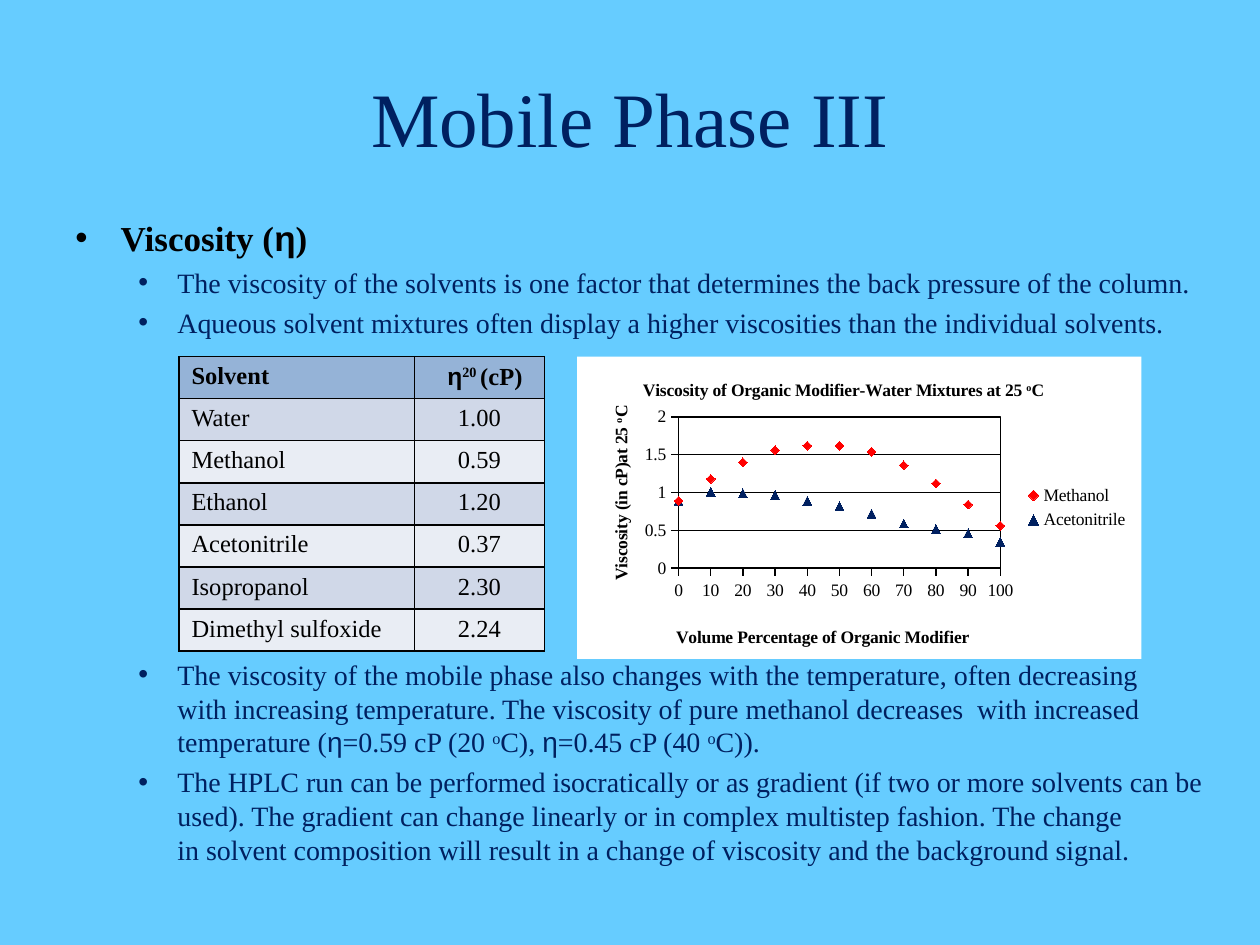
import itertools

import lxml.etree
import pptx
import pptx.chart.data
import pptx.dml.color
import pptx.enum.chart
import pptx.enum.text
import pptx.oxml
import pptx.oxml.ns
import pptx.util

Inches, Pt = pptx.util.Inches, pptx.util.Pt
ALIGN = pptx.enum.text.PP_ALIGN
ANCHOR = pptx.enum.text.MSO_ANCHOR

COLORS = {"sky": "66CCFF", "navy": "002060", "black": "000000", "white": "FFFFFF", "red": "FF0000",
          "header": "95B3D7", "band_dark": "D0D8E8", "band_light": "E9EDF4"}
SERIF, GREEK = "Times New Roman", "Arial"
LINE_GAP = 3.8
GRAPHICS_GAP = 182

BULLETS = [
    ("Viscosity (η)", dict(size=20, color="black", bold=True), 0.36, 0.38, 6),
    ("The viscosity of the solvents is one factor that determines the back pressure of the column.",
     {}, 0.81, 0.31, LINE_GAP),
    ("Aqueous solvent mixtures often display a higher viscosities than the individual solvents.",
     {}, 0.81, 0.31, LINE_GAP),
    ("The viscosity of the mobile phase also changes with the temperature, often decreasing \n"
     "with increasing temperature. The viscosity of pure methanol decreases  with increased "
     "temperature (η=0.59 cP (20 ^o^C), η=0.45 cP (40 ^o^C)).", {}, 0.81, 0.31, GRAPHICS_GAP),
    ("The HPLC run can be performed isocratically or as gradient (if two or more solvents can be "
     "used). The gradient can change linearly or in complex multistep fashion. The change \n"
     "in solvent composition will result in a change of viscosity and the background signal.",
     {}, 0.81, 0.31, LINE_GAP),
]
SOLVENTS = [("Solvent", "η^20 ^(cP)"), ("Water", "1.00"), ("Methanol", "0.59"), ("Ethanol", "1.20"),
            ("Acetonitrile", "0.37"), ("Isopropanol", "2.30"), ("Dimethyl sulfoxide", "2.24")]
MIXTURES = [
    ("Methanol", "red", "DIAMOND", [0.89, 1.18, 1.4, 1.56, 1.62, 1.62, 1.54, 1.36, 1.12, 0.84, 0.56]),
    ("Acetonitrile", "navy", "TRIANGLE",
     [0.89, 1.01, 0.99, 0.97, 0.89, 0.82, 0.72, 0.59, 0.52, 0.46, 0.35]),
]


def rgb(name):
    return pptx.dml.color.RGBColor.from_string(COLORS[name])


def write(paragraph, text, size=16, color="navy", bold=False, align=None):
    """Add text: carets enclose superscripts, newlines break lines, eta uses the Greek font."""
    paragraph.alignment = align
    for number, line in enumerate(text.split("\n")):
        if number:
            paragraph.add_line_break()
        for position, piece in enumerate(line.split("^")):
            for is_greek, letters in itertools.groupby(piece, lambda letter: letter == "η"):
                run = paragraph.add_run()
                run.text = "".join(letters)
                run.font.name = GREEK if is_greek else SERIF
                run.font.size, run.font.bold = Pt(size), bold
                run.font.color.rgb = rgb(color)
                if position % 2:
                    run.font._element.set("baseline", "30000")


def add_title(slide, left, top, width, height):
    title = slide.shapes.title
    title.left, title.top, title.width, title.height = map(Inches, (left, top, width, height))
    title.text_frame.vertical_anchor = ANCHOR.MIDDLE
    write(title.text_frame.paragraphs[0], "Mobile Phase III", size=44, align=ALIGN.CENTER)


def add_bullets(slide, left, top, width, height):
    frame = slide.shapes.add_textbox(*map(Inches, (left, top, width, height))).text_frame
    frame.word_wrap = True
    for number, (text, text_format, indent, hanging, gap) in enumerate(BULLETS):
        paragraph = frame.add_paragraph() if number else frame.paragraphs[0]
        write(paragraph, text, **text_format)
        paragraph.space_before = Pt(gap)
        properties = paragraph._p.get_or_add_pPr()
        properties.set("marL", str(Inches(indent)))
        properties.set("indent", str(-Inches(hanging)))
        lxml.etree.SubElement(properties, pptx.oxml.ns.qn("a:buFont"), typeface="Arial")
        lxml.etree.SubElement(properties, pptx.oxml.ns.qn("a:buChar"), char="•")


def add_cell_borders(cell):
    properties = cell._tc.get_or_add_tcPr()
    for number, side in enumerate(("lnL", "lnR", "lnT", "lnB")):
        properties.insert(number, pptx.oxml.parse_xml(
            f'<a:{side} {pptx.oxml.ns.nsdecls("a")} w="{Pt(1)}"><a:solidFill>'
            f'<a:srgbClr val="{COLORS["black"]}"/></a:solidFill></a:{side}>'))


def add_solvent_table(slide, left, top, width, height):
    table = slide.shapes.add_table(len(SOLVENTS), 2, *map(Inches, (left, top, width, height))).table
    for column, share in zip(table.columns, (0.645, 0.355)):
        column.width = Inches(width * share)
    for row_number, values in enumerate(SOLVENTS):
        is_header = row_number == 0
        band = "header" if is_header else ("band_light", "band_dark")[row_number % 2]
        for column_number, value in enumerate(values):
            cell = table.cell(row_number, column_number)
            cell.fill.solid()
            cell.fill.fore_color.rgb = rgb(band)
            centered = column_number == 1 and not is_header
            write(cell.text_frame.paragraphs[0], value, size=14, color="black", bold=is_header,
                  align=ALIGN.CENTER if centered else ALIGN.LEFT)
            add_cell_borders(cell)
    table.cell(0, 1).margin_left = Inches(0.26)


def chart_layout(x, y, width=None, height=None):
    """Return a manual layout given in shares of the chart's size."""
    parts = [("xMode", "edge"), ("yMode", "edge"), ("x", x), ("y", y)]
    if width:
        parts = [("layoutTarget", "inner")] + parts + [("w", width), ("h", height)]
    body = "".join(f'<c:{name} val="{value}"/>' for name, value in parts)
    return pptx.oxml.parse_xml(f'<c:layout {pptx.oxml.ns.nsdecls("c")}><c:manualLayout>{body}'
                               '</c:manualLayout></c:layout>')


def box_properties(line_xml):
    return pptx.oxml.parse_xml(
        f'<c:spPr {pptx.oxml.ns.nsdecls("c", "a")}><a:solidFill><a:srgbClr val="{COLORS["white"]}"/>'
        f'</a:solidFill><a:ln w="{Pt(0.75)}">{line_xml}</a:ln></c:spPr>')


def place_chart_title(title, text, x, y):
    write(title.text_frame.paragraphs[0], text, size=10, color="black", bold=True)
    element = title._element
    for old_layout in element.findall(pptx.oxml.ns.qn("c:layout")):
        element.remove(old_layout)
    element.find(pptx.oxml.ns.qn("c:tx")).addnext(chart_layout(x, y))


def format_axis(axis, title, x, y, maximum, step):
    axis.has_title = True
    place_chart_title(axis.axis_title, title, x, y)
    axis.minimum_scale, axis.maximum_scale, axis.major_unit = 0, maximum, step
    axis.major_tick_mark = pptx.enum.chart.XL_TICK_MARK.OUTSIDE
    axis.tick_labels.number_format, axis.tick_labels.number_format_is_linked = "General", False
    axis.format.line.color.rgb, axis.format.line.width = rgb("black"), Pt(0.75)


def add_viscosity_chart(slide, left, top, width, height):
    data = pptx.chart.data.XyChartData()
    for name, _, _, values in MIXTURES:
        series = data.add_series(name)
        for number, value in enumerate(values):
            series.add_data_point(10 * number, value)
    chart = slide.shapes.add_chart(pptx.enum.chart.XL_CHART_TYPE.XY_SCATTER,
                                   *map(Inches, (left, top, width, height)), data).chart
    chart.font.name, chart.font.size, chart.font.color.rgb = SERIF, Pt(10), rgb("black")
    chart.has_title = True
    place_chart_title(chart.chart_title, "Viscosity of Organic Modifier-Water Mixtures at 25 ^o^C",
                      0.11, 0.06)
    format_axis(chart.category_axis, "Volume Percentage of Organic Modifier", 0.17, 0.88, 100, 10)
    format_axis(chart.value_axis, "Viscosity (in cP)at 25 ^o^C", 0.05, 0.15, 2, 0.5)
    chart.category_axis.has_major_gridlines = False
    grid = chart.value_axis.major_gridlines.format.line
    grid.color.rgb, grid.width = rgb("black"), Pt(0.75)
    chart.has_legend = True
    chart.legend.position = pptx.enum.chart.XL_LEGEND_POSITION.RIGHT
    chart.legend.include_in_layout = False

    plot = chart.plots[0]
    plot.vary_by_categories = False
    for series, (_, color, marker, _) in zip(plot.series, MIXTURES):
        series.smooth = False
        series.format.line.fill.background()
        series.marker.style = pptx.enum.chart.XL_MARKER_STYLE[marker]
        series.marker.size = 5
        series.marker.format.fill.solid()
        series.marker.format.fill.fore_color.rgb = rgb(color)
        series.marker.format.line.color.rgb = rgb(color)

    plot_area = chart._chartSpace.chart.plotArea
    for old_layout in plot_area.findall(pptx.oxml.ns.qn("c:layout")):
        plot_area.remove(old_layout)
    plot_area.insert(0, chart_layout(0.18, 0.2, 0.57, 0.5))
    plot_area.append(box_properties(f'<a:solidFill><a:srgbClr val="{COLORS["black"]}"/></a:solidFill>'))
    chart._chartSpace.chart.addnext(box_properties("<a:noFill/>"))


def main():
    presentation = pptx.Presentation()
    presentation.slide_width, presentation.slide_height = Inches(10), Inches(7.5)
    slide = presentation.slides.add_slide(presentation.slide_layouts[5])
    slide.background.fill.solid()
    slide.background.fill.fore_color.rgb = rgb("sky")
    add_title(slide, 0.5, 0.3, 9, 1.25)
    add_bullets(slide, 0.5, 1.67, 9.17, 5.5)
    add_viscosity_chart(slide, 4.58, 2.83, 4.48, 2.4)
    add_solvent_table(slide, 1.42, 2.83, 2.9, 2.31)
    presentation.save("out.pptx")


if __name__ == "__main__":
    main()
